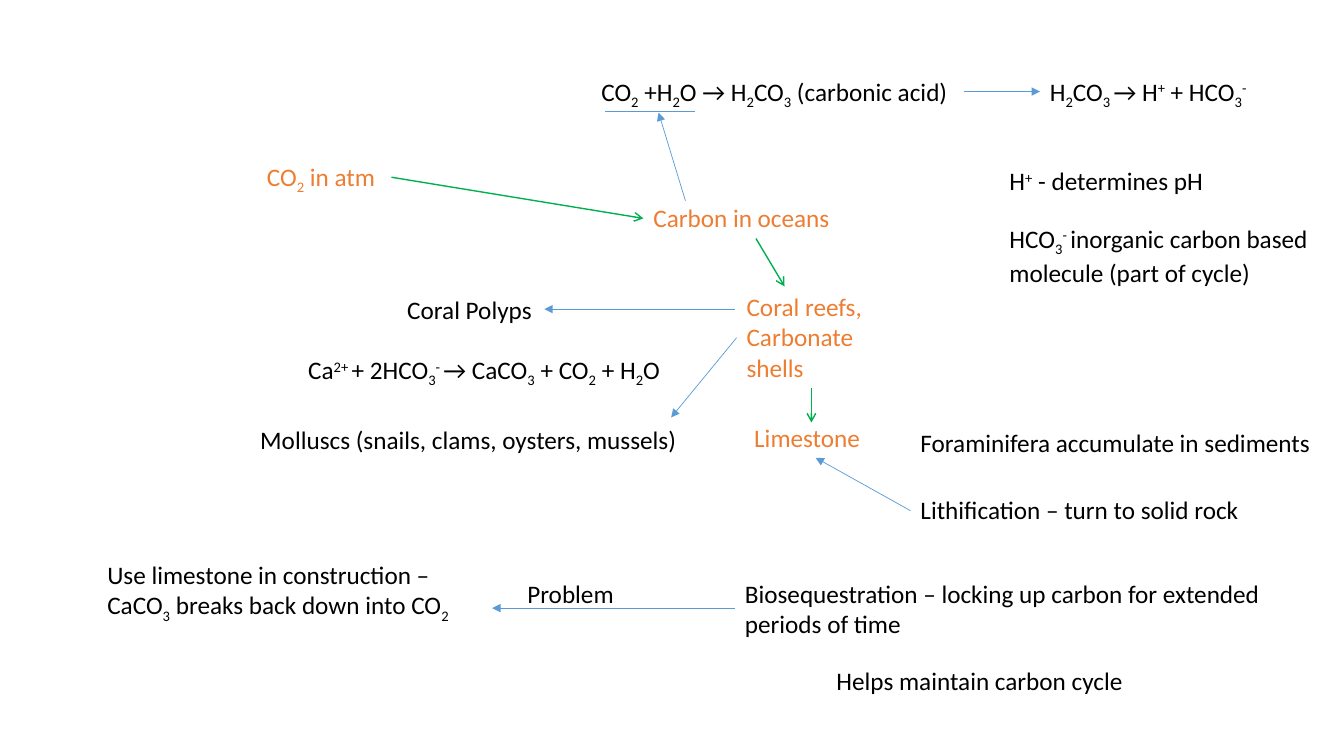
from dataclasses import dataclass

from lxml import etree
from pptx import Presentation, util as u
from pptx.dml.color import RGBColor
from pptx.enum import shapes, text
from pptx.oxml.ns import qn


@dataclass(frozen=True)
class Theme:
    font: str = "Calibri"
    size: int = 18
    note: str = "000000"
    stage: str = "ED7D31"
    flow: str = "00B050"
    link: str = "5B9BD5"
    flow_width: float = 1
    link_width: float = 0.5


THEME = Theme()
WIDTH, HEIGHT = 13.33, 7.5
COLS, ROWS = 160, 90
LINE_HEIGHT, PADDING = 0.3, 0.1

# Labels: column, row, columns wide, lines, text (_sub_ and ^super^)
STAGES = [
    (30.6, 18.6, 18.5, 1, "CO_2_ in atm"),
    (76.6, 23.5, 27, 1, "Carbon in oceans"),
    (87.7, 34.1, 17.9, 3, "Coral reefs, Carbonate shells"),
    (88.6, 49.7, 17, 1, "Limestone"),
]
NOTES = [
    (70.4, 8.5, 44.5, 1, "CO_2_ +H_2_O → H_2_CO_3_ (carbonic acid)"),
    (123.8, 8.5, 27, 1, "H_2_CO_3 _→ H^+^ + HCO_3_^-^"),
    (119, 19.1, 33.2, 1, "H^+^ - determines pH"),
    (119, 26, 40.8, 2,
     "HCO_3_^- ^inorganic carbon based molecule (part of cycle)"),
    (47.3, 34.4, 17.5, 1, "Coral Polyps"),
    (35.5, 41.6, 46.1, 1, "Ca^2+ ^+ 2HCO_3_^- ^→ CaCO_3_ + CO_2_ + H_2_O"),
    (29.8, 49.9, 53.4, 1, "Molluscs (snails, clams, oysters, mussels)"),
    (108.4, 50.3, 51.5, 1, "Foraminifera accumulate in sediments"),
    (108.4, 58.3, 46.1, 1, "Lithification – turn to solid rock"),
    (87.5, 68.2, 64.8, 2,
     "Biosequestration – locking up carbon for extended periods of time"),
    (98.4, 78.6, 45.1, 1, "Helps maintain carbon cycle"),
    (11.6, 66, 44.4, 2,
     "Use limestone in construction – CaCO_3_ breaks back down into CO_2_"),
    (61.6, 68.2, 22.3, 1, "Problem"),
]

# Lines: start column and row, end column and row
FLOWS = [
    (46.6, 21.1, 76.6, 26),
    (90, 28.4, 93.4, 34.1),
    (96.6, 46.2, 96.6, 50.3),
]
LINKS = [
    (81.6, 23.9, 78.4, 13.4),
    (114.8, 10.9, 123.8, 10.9),
    (87.5, 36.8, 64.8, 36.8),
    (87.7, 40.2, 79.9, 49.7),
    (108.4, 60.8, 97.1, 54.5),
    (87.5, 72.4, 58.6, 72.4),
]
UNDERLINES = [(72, 13.2, 82.7, 13.2)]

BASELINES = {"_": "-25000", "^": "30000"}


def col(n):
    return u.Inches(n * WIDTH / COLS)


def row(n):
    return u.Inches(n * HEIGHT / ROWS)


def split_runs(marked):
    """Yield (text, baseline) pairs; each mark switches its baseline on or off."""
    part, mark = "", None
    for char in marked:
        if char in BASELINES:
            if part:
                yield part, BASELINES.get(mark)
            part, mark = "", None if mark == char else char
        else:
            part += char
    if part:
        yield part, BASELINES.get(mark)


def add_label(s, x, y, w, lines, marked, color):
    height = u.Inches(PADDING + lines * LINE_HEIGHT)
    tf = s.shapes.add_textbox(col(x), row(y), col(w), height).text_frame
    tf.word_wrap = True
    tf.auto_size = text.MSO_AUTO_SIZE.SHAPE_TO_FIT_TEXT
    p = tf.paragraphs[0]
    for words, baseline in split_runs(marked):
        r = p.add_run()
        r.text = words
        for key, value in {"name": THEME.font, "size": u.Pt(THEME.size)}.items():
            setattr(r.font, key, value)
        r.font.color.rgb = RGBColor.from_string(color)
        if baseline:
            r._r.get_or_add_rPr().set("baseline", baseline)


def add_line(s, x1, y1, x2, y2, color, width, head):
    line = s.shapes.add_connector(
        shapes.MSO_CONNECTOR.STRAIGHT, col(x1), row(y1), col(x2), row(y2))
    line.line.color.rgb = RGBColor.from_string(color)
    line.line.width = u.Pt(width)
    if head:
        etree.SubElement(line.line._get_or_add_ln(), qn("a:tailEnd"), type=head)
    etree.SubElement(line._element.spPr, qn("a:effectLst"))


def main():
    prs = Presentation()
    prs.slide_width, prs.slide_height = u.Inches(WIDTH), u.Inches(HEIGHT)
    s = prs.slides.add_slide(prs.slide_layouts[6])

    # Arrows and the underline
    for group, color, width, head in (
        (FLOWS, THEME.flow, THEME.flow_width, "arrow"),
        (LINKS, THEME.link, THEME.link_width, "triangle"),
        (UNDERLINES, THEME.link, THEME.link_width, None),
    ):
        for ends in group:
            add_line(s, *ends, color, width, head)

    # Cycle stages and notes
    for group, color in ((STAGES, THEME.stage), (NOTES, THEME.note)):
        for label in group:
            add_label(s, *label, color)

    prs.save("out.pptx")


if __name__ == "__main__":
    main()
